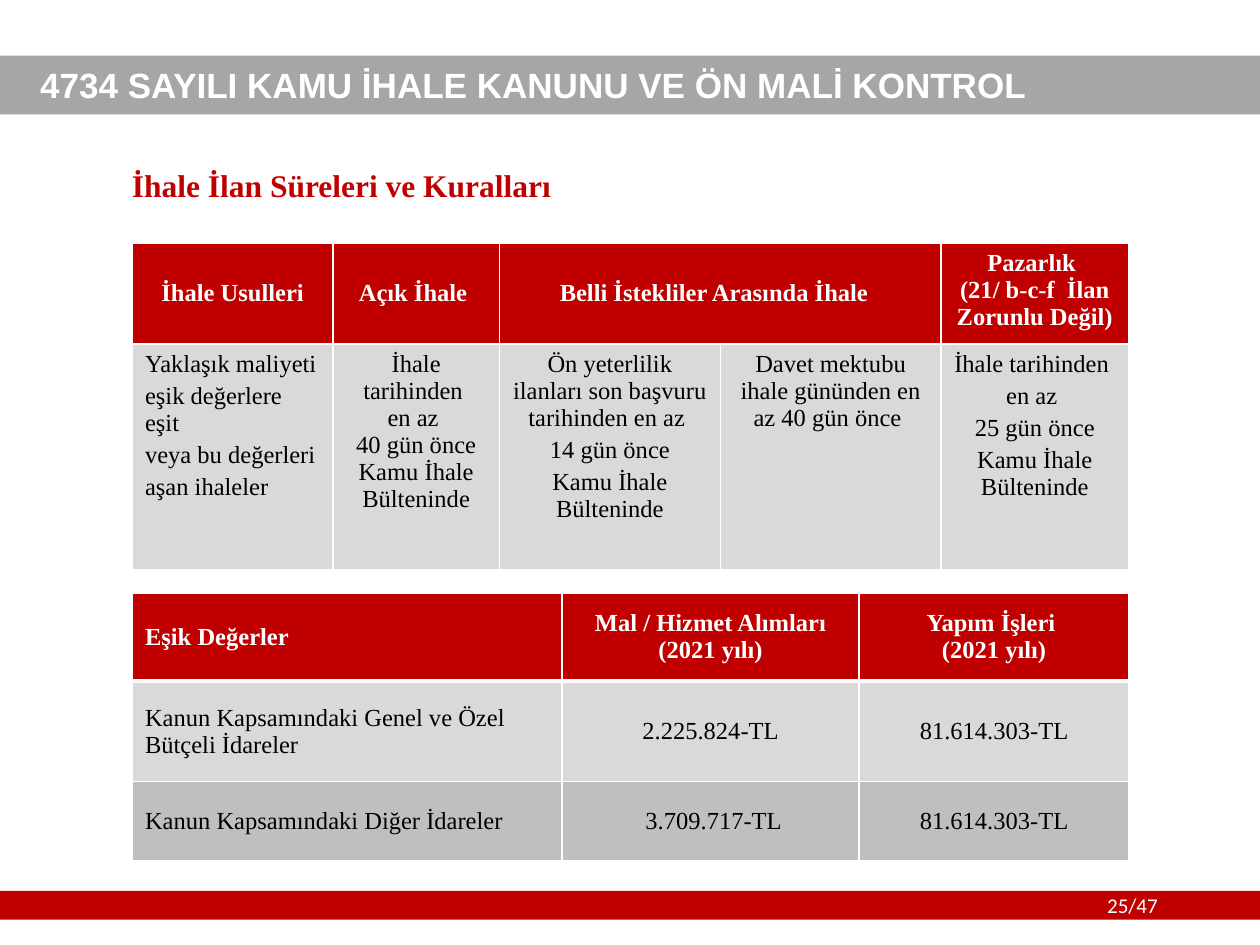
"""Slide on tender announcement periods and threshold values."""
from lxml import etree
from pptx import Presentation
from pptx.dml.color import RGBColor
from pptx.enum.shapes import MSO_SHAPE
from pptx.enum.text import MSO_ANCHOR, PP_ALIGN
from pptx.oxml.ns import qn
from pptx.util import Cm, Pt

LEFT, CENTER = PP_ALIGN.LEFT, PP_ALIGN.CENTER
TOP, MIDDLE = MSO_ANCHOR.TOP, MSO_ANCHOR.MIDDLE
RECTANGLE = MSO_SHAPE.RECTANGLE

RED = RGBColor(0xC0, 0x00, 0x00)
GRAY = RGBColor(0xA6, 0xA6, 0xA6)
LIGHT = RGBColor(0xD9, 0xD9, 0xD9)
MEDIUM = RGBColor(0xBF, 0xBF, 0xBF)
WHITE = RGBColor(0xFF, 0xFF, 0xFF)
BLACK = RGBColor(0x00, 0x00, 0x00)
SERIF = "Times New Roman"

BANDS = [(17.96, 0.58, RED), (1.12, 1.19, GRAY)]

HEADINGS = [
    ("4734 SAYILI KAMU İHALE KANUNU VE ÖN MALİ KONTROL", (0.56, 1.17, 22.99, 1.19),
     dict(size=20, font="Arial", color=WHITE, bold=True, anchor=MIDDLE, line=0.9)),
    ("25/47", (22.07, 17.86, 2.36, 0.76), dict(size=12, font="Calibri", color=WHITE)),
    ("İhale İlan Süreleri ve Kuralları", (2.41, 3.3, 22.99, 1.19),
     dict(size=18, color=RED, bold=True, line=0.9)),
]

PERIODS = dict(
    top=4.9,
    widths=[4.04, 3.36, 4.45, 4.45, 3.78],
    heights=[1.78, 4.55],
    fills=[RED, LIGHT],
    anchors=[MIDDLE, TOP],
    first_aligns=[CENTER, LEFT],
    header_rule=1,
    gap=2.8,
    merges=[(0, 2, 3)],
    rows=[
        [["İhale Usulleri"], ["Açık İhale "], ["Belli İstekliler Arasında İhale  "], None,
         ["Pazarlık \n(21/ b-c-f  İlan Zorunlu Değil) "]],
        [["Yaklaşık maliyeti", "eşik değerlere eşit", "veya bu değerleri", "aşan ihaleler"],
         ["İhale tarihinden \nen az \n40 gün önce\nKamu İhale Bülteninde"],
         ["Ön yeterlilik ilanları son başvuru tarihinden en az ", "14 gün önce",
          "Kamu İhale Bülteninde"],
         ["Davet mektubu ihale gününden en az 40 gün önce "],
         ["İhale tarihinden ", "en az ", "25 gün önce", "Kamu İhale Bülteninde"]],
    ],
)

THRESHOLDS = dict(
    top=11.95,
    widths=[8.66, 5.99, 5.44],
    heights=[1.78, 2.03, 1.6],
    fills=[RED, LIGHT, MEDIUM],
    anchors=[MIDDLE] * 3,
    first_aligns=[LEFT] * 3,
    header_rule=3,
    gap=0,
    merges=[],
    rows=[
        [["Eşik Değerler"], ["Mal / Hizmet Alımları (2021 yılı)"],
         ["Yapım İşleri ", "(2021 yılı)"]],
        [["Kanun Kapsamındaki Genel ve Özel Bütçeli İdareler"], ["2.225.824-TL"],
         ["81.614.303-TL"]],
        [["Kanun Kapsamındaki Diğer İdareler"], [" 3.709.717-TL"], ["81.614.303-TL"]],
    ],
)


def write(frame, paragraphs, size=14, font=SERIF, color=BLACK, bold=False,
          align=LEFT, anchor=TOP, line=None, gap=0):
    frame.word_wrap = True
    frame.vertical_anchor = anchor
    for index, words in enumerate(paragraphs):
        paragraph = frame.add_paragraph() if index else frame.paragraphs[0]
        paragraph.text = words
        paragraph.alignment = align
        if line:
            paragraph.line_spacing = line
        if index and gap:
            paragraph.space_before = Pt(gap)
        for run in paragraph.runs:
            run.font.size = Pt(size)
            run.font.name = font
            run.font.bold = bold
            run.font.color.rgb = color
        for line_break in paragraph._p.findall(qn("a:br")):
            etree.SubElement(line_break, qn("a:rPr"), sz=str(size * 100))


def add_borders(cell, top, bottom):
    properties = cell._tc.get_or_add_tcPr()
    for side, points in (("L", 1), ("R", 1), ("T", top), ("B", bottom)):
        border = etree.SubElement(properties, qn(f"a:ln{side}"), w=str(Pt(points)))
        fill = etree.SubElement(border, qn("a:solidFill"))
        etree.SubElement(fill, qn("a:srgbClr"), val=str(WHITE))


def add_grid(slide, grid):
    widths, heights, rule = grid["widths"], grid["heights"], grid["header_rule"]
    table = slide.shapes.add_table(
        len(heights), len(widths), Cm(2.67), Cm(grid["top"]),
        Cm(sum(widths)), Cm(sum(heights))).table
    table.horz_banding = False
    for column, width in zip(table.columns, widths):
        column.width = Cm(width)
    for row, height in zip(table.rows, heights):
        row.height = Cm(height)
    for row, start, end in grid["merges"]:
        table.cell(row, start).merge(table.cell(row, end))
    for r, contents in enumerate(grid["rows"]):
        header = r == 0
        for c, paragraphs in enumerate(contents):
            cell = table.cell(r, c)
            add_borders(cell, rule if r == 1 else 1, rule if header else 1)
            cell.fill.solid()
            cell.fill.fore_color.rgb = grid["fills"][r]
            if paragraphs:
                write(cell.text_frame, paragraphs, bold=header, gap=grid["gap"],
                      color=WHITE if header else BLACK,
                      align=CENTER if c else grid["first_aligns"][r])
                cell.vertical_anchor = grid["anchors"][r]
    if grid is PERIODS:
        table.cell(0, len(widths) - 1).vertical_anchor = TOP


def main():
    deck = Presentation()
    deck.slide_width, deck.slide_height = Cm(25.4), Cm(19.05)
    slide = deck.slides.add_slide(deck.slide_layouts[6])
    for top, height, color in BANDS:
        band = slide.shapes.add_shape(RECTANGLE, 0, Cm(top), deck.slide_width, Cm(height))
        band.shadow.inherit = False
        band.fill.solid()
        band.fill.fore_color.rgb = color
        band.line.fill.background()
    for words, place, style in HEADINGS:
        box = slide.shapes.add_textbox(*map(Cm, place))
        write(box.text_frame, [words], **style)
    for grid in (PERIODS, THRESHOLDS):
        add_grid(slide, grid)
    deck.save("out.pptx")


if __name__ == "__main__":
    main()
